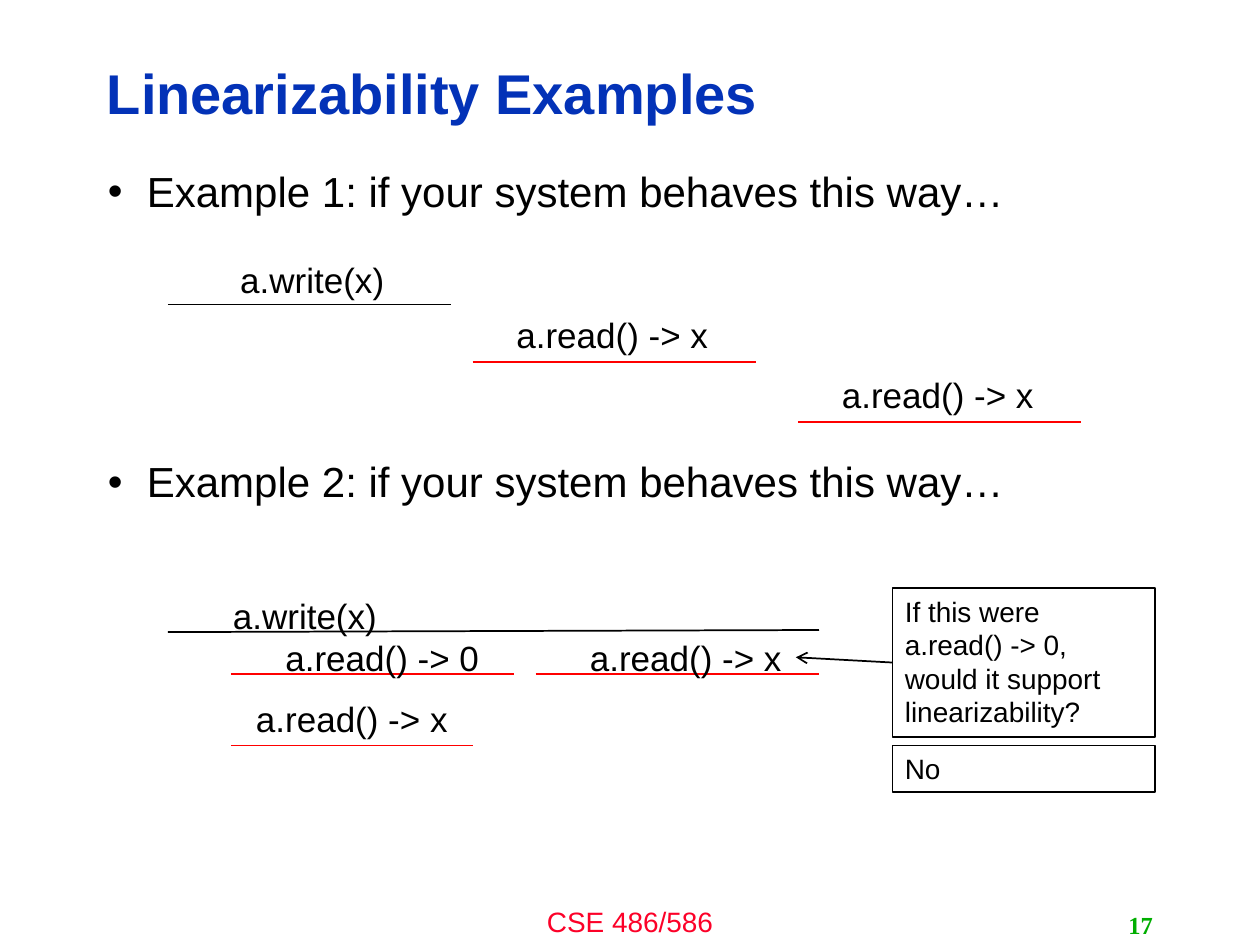
import pptx
import pptx.util
import pptx.dml.color
import pptx.enum.shapes
import pptx.enum.text
import pptx.oxml.ns
import lxml.etree

BLACK, RED = "000000", "FF0000"
ALIGN = pptx.enum.text.PP_ALIGN
ANCHOR = pptx.enum.text.MSO_ANCHOR
qn = pptx.oxml.ns.qn

deck = pptx.Presentation()
deck.slide_width = pptx.util.Inches(10)
deck.slide_height = pptx.util.Inches(7.5)
page = deck.slides.add_slide(deck.slide_layouts[6])
column = deck.slide_width / 120
row = deck.slide_height / 90


def color(value):
    return pptx.dml.color.RGBColor.from_string(value)


def write(text, left, top, width, height, size=20, font="Arial", ink=BLACK, bold=False,
          align=ALIGN.LEFT, anchor=ANCHOR.TOP, wrap=True, spacing=None, frame=False):
    place = [round(n) for n in (left * column, top * row, width * column, height * row)]
    if frame:
        box = page.shapes.add_shape(pptx.enum.shapes.MSO_SHAPE.RECTANGLE, *place)
        box.shadow.inherit = False
        box.fill.background()
        box.line.color.rgb = color(BLACK)
        box.line.width = pptx.util.Pt(0.75)
    else:
        box = page.shapes.add_textbox(*place)
    box.text_frame.word_wrap = wrap
    box.text_frame.vertical_anchor = anchor
    box.text_frame.text = text
    for para in box.text_frame.paragraphs:
        para.alignment = align
        para.line_spacing = spacing
        for span in para.runs:
            span.font.name = font
            span.font.size = pptx.util.Pt(size)
            span.font.bold = bold
            span.font.color.rgb = color(ink)
    return box


write("Linearizability Examples", 9, 4.3, 95.8, 9.7, size=32, ink="0332B7", bold=True,
      anchor=ANCHOR.MIDDLE, spacing=0.9)

examples = write("\n".join(f"Example {n}: if your system behaves this way…" for n in (1, 2)),
                 9.1, 15.7, 100.8, 64.7, size=24, spacing=0.9)
for para in examples.text_frame.paragraphs:
    properties = para._p.get_or_add_pPr()
    indent = pptx.util.Inches(0.31)
    properties.set("marL", str(indent))
    properties.set("indent", str(-indent))
    lxml.etree.SubElement(properties, qn("a:buFont")).set("typeface", "Arial")
    lxml.etree.SubElement(properties, qn("a:buChar")).set("char", "•")
examples.text_frame.paragraphs[1].space_before = pptx.util.Pt(140)

lines = [
    (16, 29, 43, 29, BLACK, False),
    (45, 34.5, 72, 34.5, RED, False),
    (76, 40.2, 103, 40.2, RED, False),
    (16, 60.2, 78, 60, BLACK, False),
    (22, 64.2, 49, 64.2, RED, False),
    (51, 64.2, 78, 64.2, RED, False),
    (22, 71, 45, 71, RED, False),
    (85, 63.1, 75.8, 62.6, BLACK, True),
]
for left, top, right, bottom, ink, arrow in lines:
    line = page.shapes.add_connector(
        pptx.enum.shapes.MSO_CONNECTOR.STRAIGHT,
        round(left * column), round(top * row), round(right * column), round(bottom * row))
    line.line.color.rgb = color(ink)
    line.line.width = pptx.util.Pt(1)
    if arrow:
        lxml.etree.SubElement(line.line._get_or_add_ln(), qn("a:tailEnd")).set("type", "arrow")
    lxml.etree.SubElement(line._element.spPr, qn("a:effectLst"))

operations = [
    ("a.write(x)", 21.7, 24, 16.3),
    ("a.read() -> x", 48, 29.3, 20.9),
    ("a.read() -> x", 79, 35, 20.9),
    ("a.write(x)", 21, 56, 16.3),
    ("a.read() -> 0", 26, 60, 21),
    ("a.read() -> x", 55, 60, 20.9),
    ("a.read() -> x", 23.2, 65.8, 20.9),
]
for text, left, top, width in operations:
    write(text, left, top, width, 5.25, wrap=False)

write("If this were a.read() -> 0, would it support linearizability?",
      85, 56, 25, 14.2, size=16, frame=True)
write("No", 85, 71, 25, 4.45, size=16, frame=True)

write("CSE 486/586", 40, 85.55, 40, 4.45, size=16, ink="FC0128", align=ALIGN.CENTER)
write("17", 86, 86.2, 25, 3.8, size=14, font="Times New Roman", ink="00AE00", bold=True,
      align=ALIGN.RIGHT, anchor=ANCHOR.MIDDLE, wrap=False)

deck.save("out.pptx")
